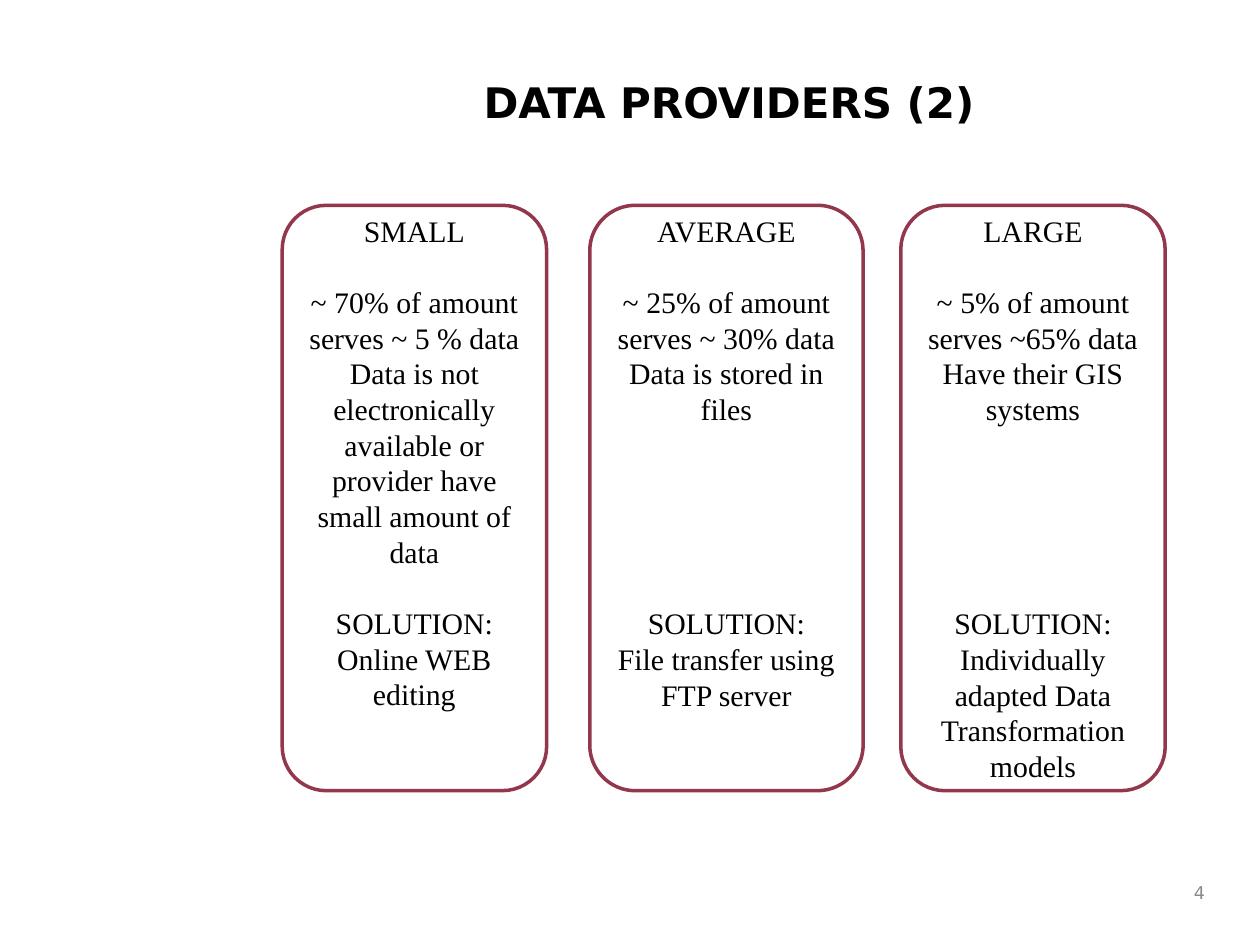
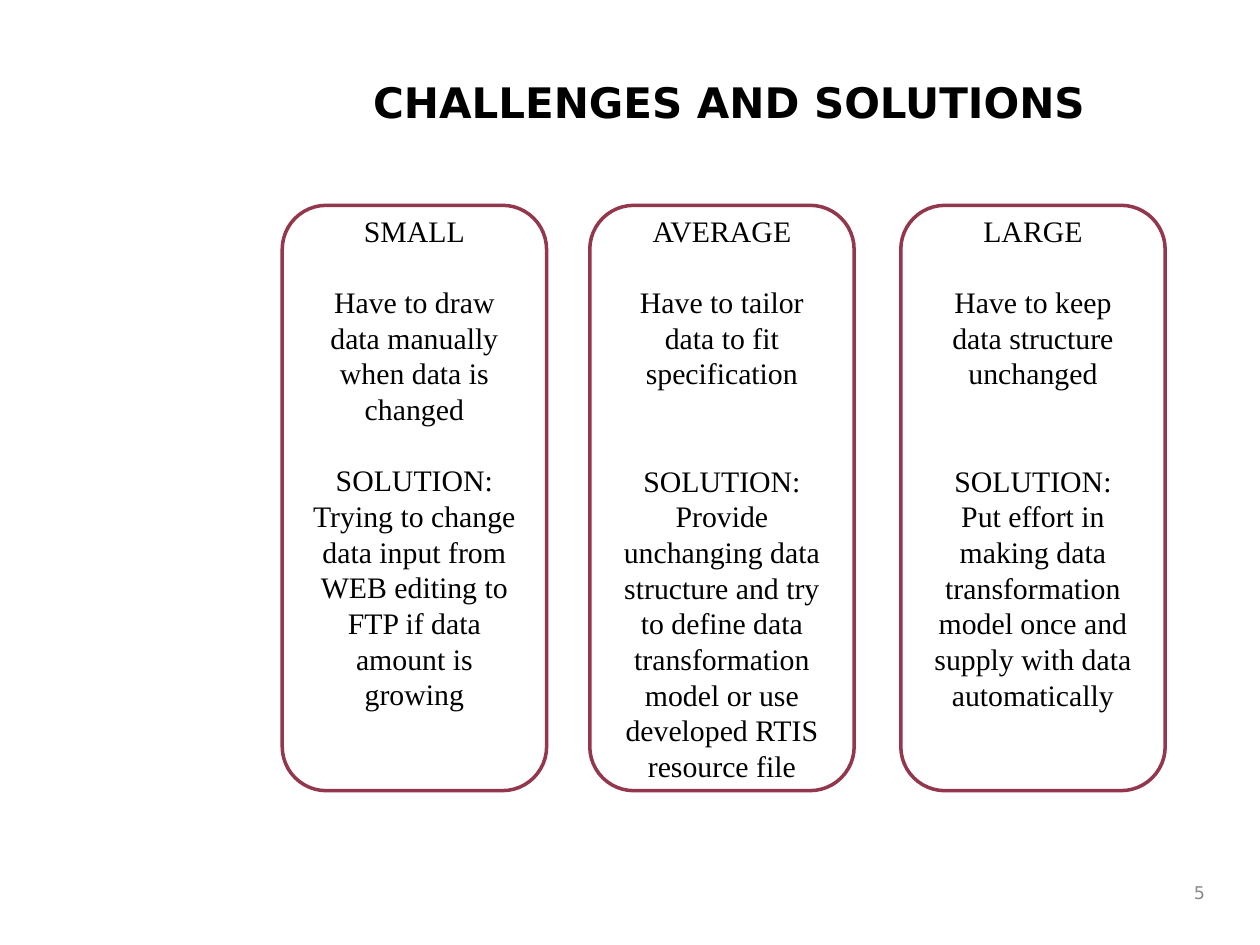
from dataclasses import dataclass

from pptx import Presentation
from pptx.dml.color import RGBColor
from pptx.enum.shapes import MSO_SHAPE
from pptx.enum.text import MSO_ANCHOR, MSO_AUTO_SIZE, PP_ALIGN
from pptx.util import Cm, Pt

ROUNDED = MSO_SHAPE.ROUNDED_RECTANGLE
TOP, MIDDLE = MSO_ANCHOR.TOP, MSO_ANCHOR.MIDDLE
CENTER, RIGHT = PP_ALIGN.CENTER, PP_ALIGN.RIGHT
NO_AUTOFIT = MSO_AUTO_SIZE.NONE
TITLE_ONLY = 5

# Content: each card has a heading, its situation, its solution,
# the free lines above the solution and the free lines at the foot.
SLIDES = [
    {
        "number": 4,
        "title": "DATA PROVIDERS (2)",
        "widths": (5.33, 5.51, 5.33),
        "cards": [
            ("SMALL",
             ["~ 70% of amount", "serves ~ 5 % data",
              "Data is not electronically available or provider have small amount of data"],
             "Online WEB editing", 1, 2),
            ("AVERAGE",
             ["~ 25% of amount", "serves ~ 30% data", "Data is stored in files"],
             "File transfer using FTP server", 5, 2),
            ("LARGE",
             ["~ 5% of amount", "serves ~65% data", "Have their GIS systems"],
             "Individually adapted Data Transformation models", 5, 0),
        ],
    },
    {
        "number": 5,
        "title": "CHALLENGES AND SOLUTIONS",
        "widths": (5.33, 5.33, 5.33),
        "cards": [
            ("SMALL",
             ["Have to draw data manually when data is changed"],
             "Trying to change data input from WEB editing to FTP if data amount is growing",
             1, 2),
            ("AVERAGE",
             ["Have to tailor data to fit specification"],
             "Provide unchanging data structure and try to define data transformation "
             "model or use developed RTIS resource file", 2, 0),
            ("LARGE",
             ["Have to keep data structure unchanged"],
             "Put effort in making data transformation model once and supply with data "
             "automatically", 2, 2),
        ],
    },
]
SOLUTION_LABEL = "SOLUTION:"


@dataclass(frozen=True)
class Theme:
    heading_font: str = "DejaVu Sans"
    body_font: str = "Times New Roman"
    text: RGBColor = RGBColor(0, 0, 0)
    paper: RGBColor = RGBColor(255, 255, 255)
    border: RGBColor = RGBColor(0x93, 0x37, 0x4D)
    muted: RGBColor = RGBColor(0x89, 0x89, 0x89)
    title_size: int = 24
    body_size: int = 17
    number_size: int = 10
    body_line: float = 20.4
    border_width: int = 2


THEME = Theme()

# Places in centimetres
TITLE_BOX = (5.26, 1.42, 18.87, 2.41)
NUMBER_BOX = (23.7, 17.58, 0.84, 0.84)
CARD_LEFTS = (5.69, 11.89, 18.16)
CARD_TOP, CARD_HEIGHT = 4.14, 11.8


def format_paragraph(paragraph, font, size, color, alignment, bold=False):
    paragraph.alignment = alignment
    for run in paragraph.runs:
        run.font.name = font
        run.font.size = Pt(size)
        run.font.color.rgb = color
        run.font.bold = bold


def add_title(slide, text):
    title = slide.shapes.title
    title.left, title.top, title.width, title.height = map(Cm, TITLE_BOX)
    frame = title.text_frame
    frame.text = text
    frame.auto_size = NO_AUTOFIT
    frame.vertical_anchor = TOP
    format_paragraph(frame.paragraphs[0], THEME.heading_font, THEME.title_size,
                     THEME.text, CENTER, bold=True)


def add_number(slide, number):
    frame = slide.shapes.add_textbox(*map(Cm, NUMBER_BOX)).text_frame
    frame.text = str(number)
    frame.word_wrap = True
    frame.vertical_anchor = MIDDLE
    format_paragraph(frame.paragraphs[0], THEME.heading_font, THEME.number_size,
                     THEME.muted, RIGHT)


def add_card(slide, left, width, card):
    heading, situation, solution, solution_gap, foot_gap = card
    shape = slide.shapes.add_shape(ROUNDED, Cm(left), Cm(CARD_TOP),
                                   Cm(width), Cm(CARD_HEIGHT))
    shape.shadow.inherit = False
    shape.fill.solid()
    shape.fill.fore_color.rgb = THEME.paper
    shape.line.color.rgb = THEME.border
    shape.line.width = Pt(THEME.border_width)

    # The foot margin keeps all headings on one level
    frame = shape.text_frame
    frame.word_wrap = True
    frame.vertical_anchor = MIDDLE
    frame.margin_top = 0
    frame.margin_bottom = Pt(foot_gap * THEME.body_line)
    frame.text = "\n".join([heading, *situation, SOLUTION_LABEL, solution])
    for paragraph in frame.paragraphs:
        paragraph.line_spacing = Pt(THEME.body_line)
        format_paragraph(paragraph, THEME.body_font, THEME.body_size,
                         THEME.text, CENTER)
    frame.paragraphs[1].space_before = Pt(THEME.body_line)
    frame.paragraphs[-2].space_before = Pt(solution_gap * THEME.body_line)


def main():
    presentation = Presentation()
    presentation.slide_width, presentation.slide_height = Cm(25.4), Cm(19.05)
    for content in SLIDES:
        slide = presentation.slides.add_slide(presentation.slide_layouts[TITLE_ONLY])
        add_number(slide, content["number"])
        add_title(slide, content["title"])
        for left, width, card in zip(CARD_LEFTS, content["widths"], content["cards"]):
            add_card(slide, left, width, card)
    presentation.save("out.pptx")


if __name__ == "__main__":
    main()
